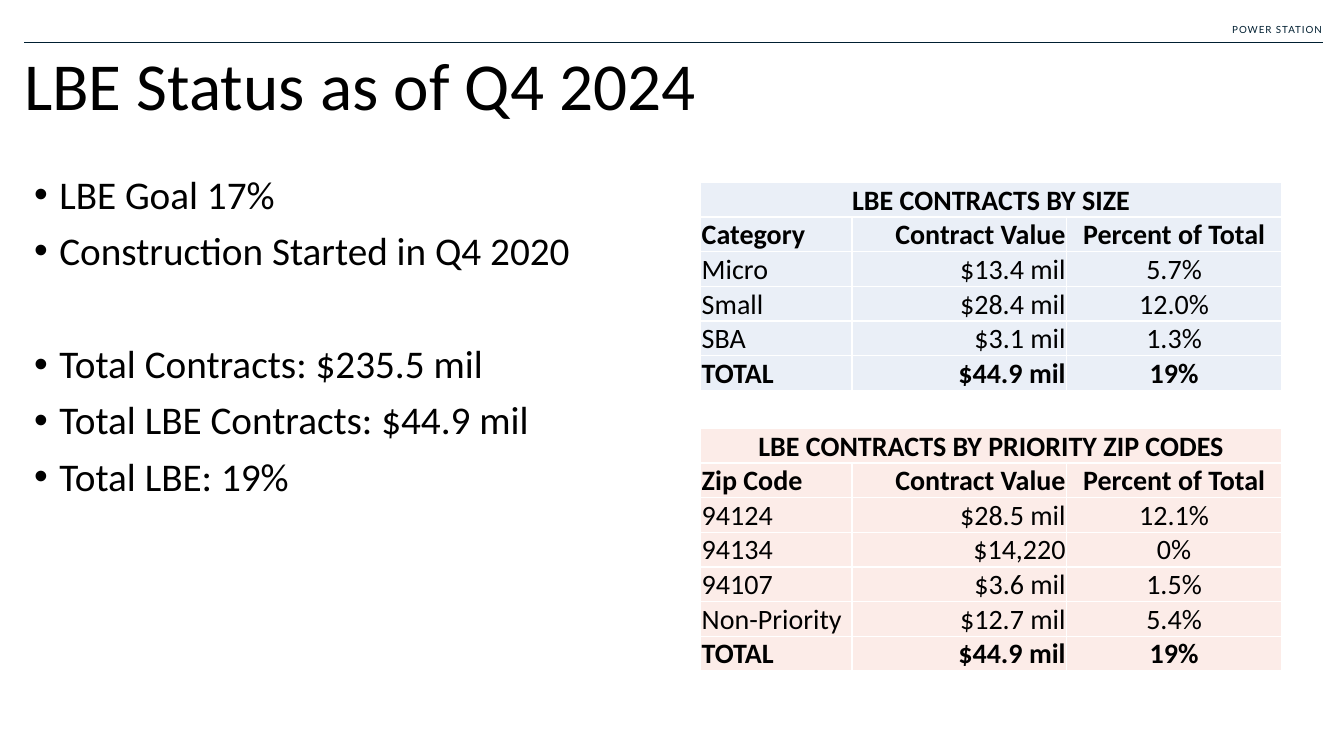
from dataclasses import dataclass

from lxml.etree import SubElement
from pptx import Presentation
from pptx.dml.color import RGBColor
from pptx.enum.shapes import MSO_CONNECTOR
from pptx.enum.text import MSO_ANCHOR, PP_ALIGN
from pptx.oxml import parse_xml
from pptx.oxml.ns import nsdecls, qn
from pptx.util import Inches, Pt

COLORS = {
    "text": "000000",
    "navy": "001F31",
    "border": "FFFFFF",
    "blue": "EAEFF7",
    "peach": "FCECE8",
}
COLUMN_WIDTHS = (1.5, 2.13, 2.13)
COLUMN_ALIGNS = (PP_ALIGN.LEFT, PP_ALIGN.RIGHT, PP_ALIGN.CENTER)
ROW_HEIGHT = 0.34


@dataclass
class ContractTable:
    top: float
    fill: str
    title: str
    rows: list[tuple[str, str, str]]


@dataclass
class Bullet:
    text: str
    space_before: float = 10


BULLETS = [
    Bullet("LBE Goal 17%", 0),
    Bullet("Construction Started in Q4 2020"),
    Bullet("Total Contracts: $235.5 mil", 50.5),
    Bullet("Total LBE Contracts: $44.9 mil"),
    Bullet("Total LBE: 19%"),
]

TABLES = [
    ContractTable(1.81, "blue", "LBE CONTRACTS BY SIZE", [
        ("Category", "Contract Value", "Percent of Total"),
        ("Micro", "$13.4 mil", "5.7%"),
        ("Small", "$28.4 mil", "12.0%"),
        ("SBA", "$3.1 mil", "1.3%"),
        ("TOTAL", "$44.9 mil", "19%"),
    ]),
    ContractTable(4.25, "peach", "LBE CONTRACTS BY PRIORITY ZIP CODES", [
        ("Zip Code", "Contract Value", "Percent of Total"),
        ("94124", "$28.5 mil", "12.1%"),
        ("94134", "$14,220", "0%"),
        ("94107", "$3.6 mil", "1.5%"),
        ("Non-Priority", "$12.7 mil", "5.4%"),
        ("TOTAL", "$44.9 mil", "19%"),
    ]),
]


def rgb(name: str) -> RGBColor:
    return RGBColor.from_string(COLORS[name])


def write(p, text: str, *, size: float, font: str = "Calibri", color: str = "text",
          bold: bool = False, align=PP_ALIGN.LEFT, line_spacing: float | None = None):
    p.alignment = align
    p.line_spacing = line_spacing
    r = p.add_run()
    r.text = text
    r.font.size = Pt(size)
    r.font.name = font
    r.font.bold = bold
    r.font.color.rgb = rgb(color)
    return r


def add_text_box(slide, left: float, top: float, width: float, height: float):
    box = slide.shapes.add_textbox(Inches(left), Inches(top), Inches(width), Inches(height))
    box.text_frame.word_wrap = True
    return box.text_frame


def add_header(slide) -> None:
    tf = add_text_box(slide, 10.25, 0.19, 2.96, 0.22)
    r = write(tf.paragraphs[0], "POWER STATION", size=7, font="Lato", color="navy",
              align=PP_ALIGN.RIGHT)
    r.font._element.set("spc", "70")
    rule = slide.shapes.add_connector(MSO_CONNECTOR.STRAIGHT, Inches(0.24), Inches(0.42),
                                      Inches(13.12), Inches(0.42))
    rule.line.color.rgb = rgb("navy")
    rule.line.width = Pt(0.5)
    SubElement(rule._element.spPr, qn("a:effectLst"))


def add_title(slide) -> None:
    sp = slide.shapes.title
    sp.left, sp.top, sp.width, sp.height = map(Inches, (0.14, 0.47, 12.97, 1.24))
    tf = sp.text_frame
    tf.vertical_anchor = MSO_ANCHOR.TOP
    write(tf.paragraphs[0], "LBE Status as of Q4 2024", size=48, line_spacing=0.9)


def add_bullets(slide) -> None:
    tf = add_text_box(slide, 0.24, 1.69, 6.29, 5.06)
    for i, bullet in enumerate(BULLETS):
        p = tf.add_paragraph() if i else tf.paragraphs[0]
        pPr = p._p.get_or_add_pPr()
        pPr.set("marL", str(Inches(0.25)))
        pPr.set("indent", str(Inches(-0.25)))
        SubElement(pPr, qn("a:buFont"), typeface="Arial")
        SubElement(pPr, qn("a:buChar"), char="•")
        write(p, bullet.text, size=28, line_spacing=0.9)
        p.space_before = Pt(bullet.space_before)


def format_cell(cell, fill: str) -> None:
    cell.vertical_anchor = MSO_ANCHOR.BOTTOM
    cell.margin_left = cell.margin_right = cell.margin_top = Inches(0.01)
    cell.margin_bottom = 0
    cell.fill.solid()
    cell.fill.fore_color.rgb = rgb(fill)
    tcPr = cell._tc.get_or_add_tcPr()
    for i, side in enumerate(("lnL", "lnR", "lnT", "lnB")):
        tcPr.insert(i, parse_xml(
            f'<a:{side} {nsdecls("a")} w="{Pt(1)}"><a:solidFill>'
            f'<a:srgbClr val="{COLORS["border"]}"/></a:solidFill></a:{side}>'))


def add_contract_table(slide, spec: ContractTable) -> None:
    n_rows = len(spec.rows) + 1
    frame = slide.shapes.add_table(n_rows, len(COLUMN_WIDTHS), Inches(6.95), Inches(spec.top),
                                   Inches(sum(COLUMN_WIDTHS)), Inches(ROW_HEIGHT * n_rows))
    table = frame.table
    table.horz_banding = table.first_row = False
    for column, width in zip(table.columns, COLUMN_WIDTHS):
        column.width = Inches(width)
    for row in table.rows:
        row.height = Inches(ROW_HEIGHT)
    for cell in table.iter_cells():
        format_cell(cell, spec.fill)
    title = table.cell(0, 0)
    title.merge(table.cell(0, len(COLUMN_WIDTHS) - 1))
    write(title.text_frame.paragraphs[0], spec.title, size=20, bold=True, align=PP_ALIGN.CENTER)
    for i, values in enumerate(spec.rows, start=1):
        for j, value in enumerate(values):
            write(table.cell(i, j).text_frame.paragraphs[0], value, size=20,
                  bold=i in (1, n_rows - 1), align=COLUMN_ALIGNS[j])


def main() -> None:
    prs = Presentation()
    prs.slide_width, prs.slide_height = Inches(13.33), Inches(7.5)
    slide = prs.slides.add_slide(prs.slide_layouts[5])
    add_header(slide)
    add_title(slide)
    add_bullets(slide)
    for spec in TABLES:
        add_contract_table(slide, spec)
    prs.save("out.pptx")


if __name__ == "__main__":
    main()
